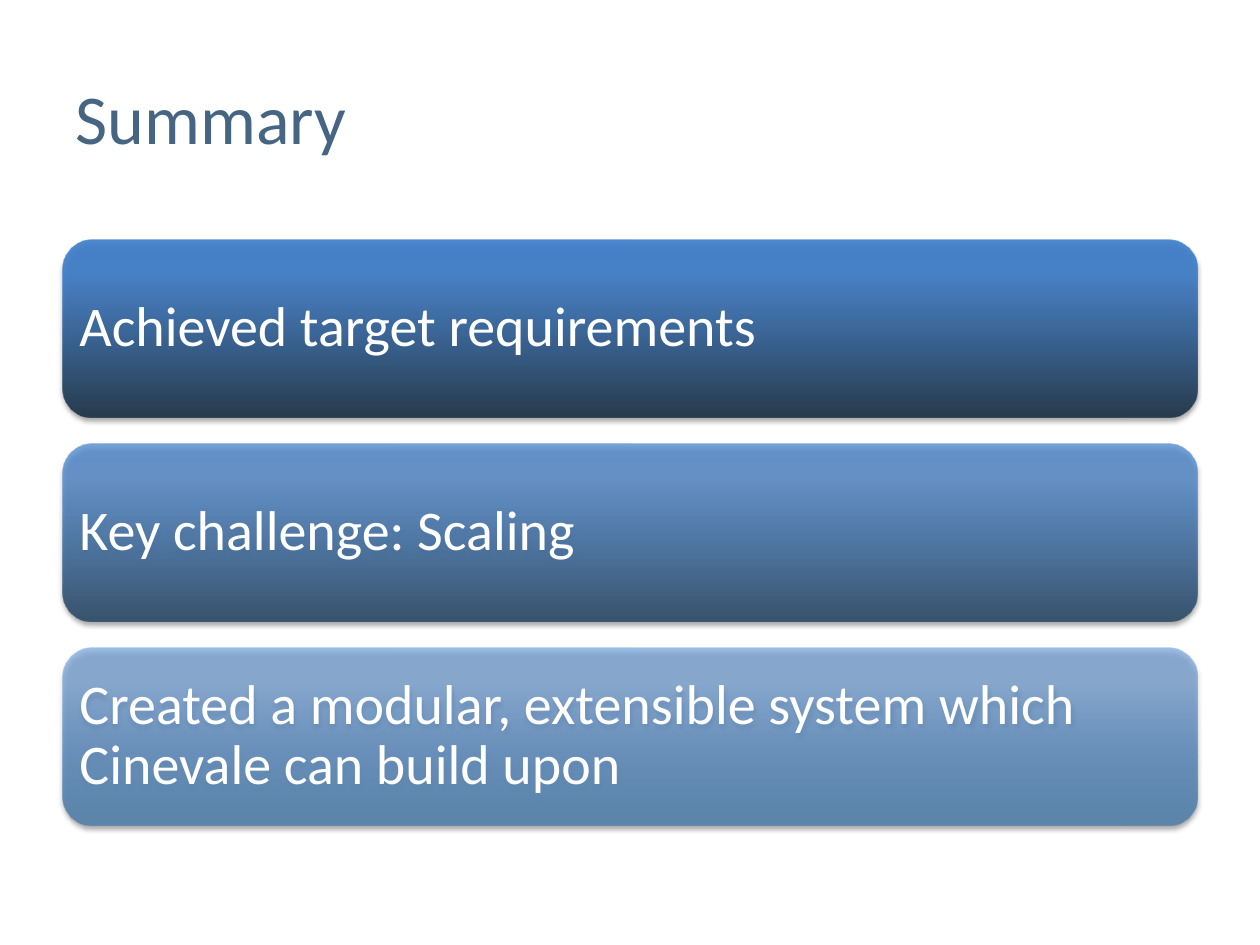
from lxml.etree import SubElement
from pptx import Presentation
from pptx.dml.color import RGBColor
from pptx.enum.shapes import MSO_SHAPE
from pptx.enum.text import MSO_ANCHOR, PP_ALIGN
from pptx.oxml.ns import qn
from pptx.util import Pt

COLORS = {
    "title": "456583",
    "text": "FFFFFF",
    "shadow": "000000",
    "middle": "3D7CC7",
    "top": "3A7CCB",
}
MESSAGES = [
    ("Achieved target requirements", "283B4C", 90),
    ("Key challenge: Scaling", "39536B", 70),
    ("Created a modular, extensible system which Cinevale can build upon", "5D85A9", 50),
]
LEFT, WIDTH = 36, 648
FIRST_TOP, BAR_HEIGHT, BAR_PITCH = 136.8, 101.5, 116.6


def format_text(shape, size, color):
    shape.text_frame.word_wrap = True
    shape.text_frame.vertical_anchor = MSO_ANCHOR.MIDDLE
    paragraph = shape.text_frame.paragraphs[0]
    paragraph.alignment = PP_ALIGN.LEFT
    font = paragraph.runs[0].font
    font.name = "Calibri"
    font.size = Pt(size)
    font.color.rgb = RGBColor.from_string(color)


def add_color(parent, color, opacity):
    element = SubElement(parent, qn("a:srgbClr"), val=color)
    SubElement(element, qn("a:alpha"), val=str(opacity * 1000))


def set_gradient(shape, stops):
    shape.fill.gradient()
    shape.fill.gradient_angle = 90
    stop_list = shape._element.spPr.find(".//" + qn("a:gsLst"))
    for stop in list(stop_list):
        stop_list.remove(stop)
    for position, color, opacity in stops:
        stop = SubElement(stop_list, qn("a:gs"), pos=str(position * 1000))
        add_color(stop, color, opacity)


def set_shadow(shape):
    shape.shadow.inherit = False
    effects = shape._element.spPr.find(qn("a:effectLst"))
    shadow = SubElement(
        effects, qn("a:outerShdw"), blurRad=str(Pt(3.1)), dist=str(Pt(1.8)),
        dir="5400000", rotWithShape="0",
    )
    add_color(shadow, COLORS["shadow"], 35)


def add_title(slide, text):
    title = slide.shapes.title
    title.left, title.top = Pt(LEFT), Pt(21.6)
    title.width, title.height = Pt(WIDTH), Pt(90)
    title.text_frame.text = text
    format_text(title, 40, COLORS["title"])


def add_bar(slide, top, text, base_color, opacity):
    bar = slide.shapes.add_shape(
        MSO_SHAPE.ROUNDED_RECTANGLE, Pt(LEFT), Pt(top), Pt(WIDTH), Pt(BAR_HEIGHT)
    )
    set_gradient(bar, [
        (0, base_color, 100),
        (80, COLORS["middle"], opacity),
        (100, COLORS["top"], opacity),
    ])
    bar.line.fill.background()
    set_shadow(bar)
    frame = bar.text_frame
    frame.text = text
    frame.margin_left = frame.margin_right = Pt(4.5)
    frame.margin_top = frame.margin_bottom = Pt(4.5)
    frame.paragraphs[0].line_spacing = 0.9
    format_text(bar, 32, COLORS["text"])


def main():
    presentation = Presentation()
    presentation.slide_width, presentation.slide_height = Pt(720), Pt(540)
    slide = presentation.slides.add_slide(presentation.slide_layouts[5])
    add_title(slide, "Summary")
    for index, (text, base_color, opacity) in enumerate(MESSAGES):
        add_bar(slide, FIRST_TOP + index * BAR_PITCH, text, base_color, opacity)
    presentation.save("out.pptx")


if __name__ == "__main__":
    main()
